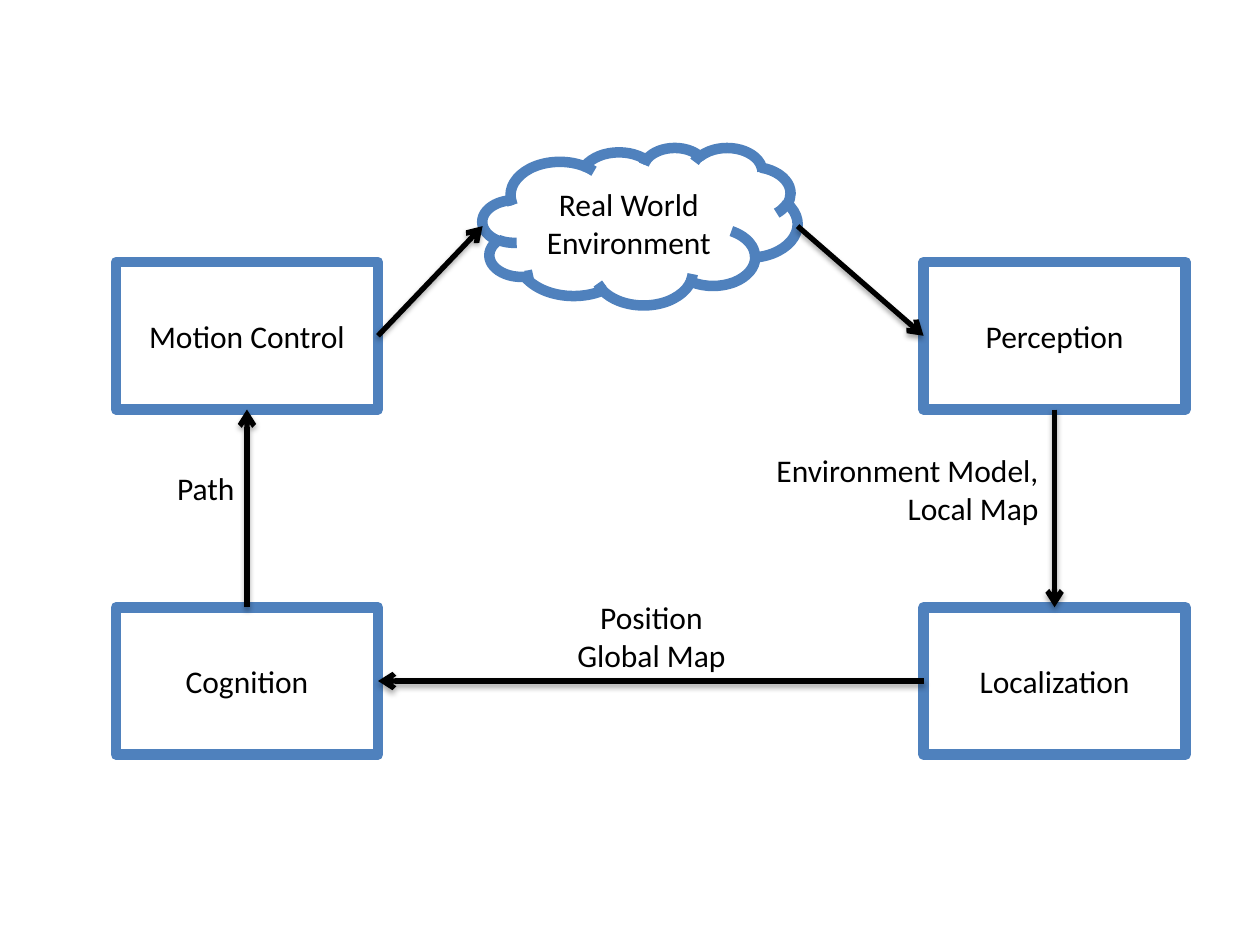
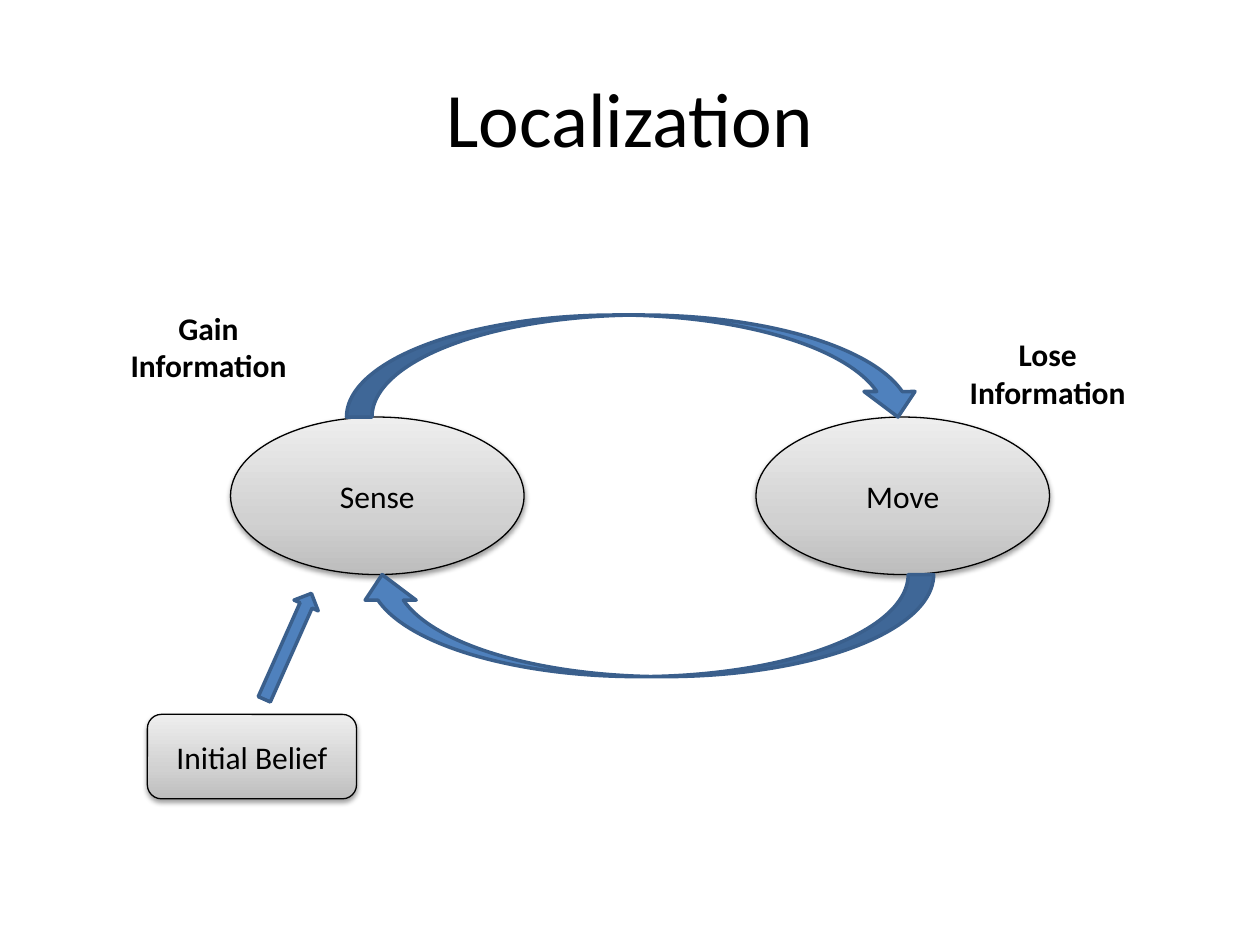
import pptx
import pptx.util
import pptx.dml.color
import pptx.enum.shapes
import pptx.enum.text
import pptx.oxml
import pptx.oxml.ns

Inches = pptx.util.Inches
Pt = pptx.util.Pt
SHAPE = pptx.enum.shapes.MSO_SHAPE
ALIGN = pptx.enum.text.PP_ALIGN
ANCHOR = pptx.enum.text.MSO_ANCHOR
NS = pptx.oxml.ns.nsdecls("a")

COLORS = {"ink": "000000", "paper": "FFFFFF", "blue": "4F81BD", "edge": "3A5F8C"}
GREYS = [(0, "BDBDBD"), (35, "D1D1D1"), (100, "EEEEEE")]
FONT = "Calibri"


def color(name):
    return pptx.dml.color.RGBColor.from_string(COLORS[name])


def write(frame, text, size=18, bold=False, align=ALIGN.CENTER, anchor=ANCHOR.MIDDLE):
    """Fill a text frame, one paragraph for each line of text."""
    frame.word_wrap = True
    frame.vertical_anchor = anchor
    frame.text = text
    for para in frame.paragraphs:
        para.alignment = align
        font = para.font
        font.name, font.size, font.bold = FONT, Pt(size), bold
        font.color.rgb = color("ink")


def shadow(props, alpha, dist):
    """Add a soft shadow that falls straight down."""
    for old in props.findall(pptx.oxml.ns.qn("a:effectLst")):
        props.remove(old)
    props.append(pptx.oxml.parse_xml(
        f'<a:effectLst {NS}><a:outerShdw blurRad="{Pt(3.1)}" dist="{Pt(dist)}" '
        f'dir="5400000" rotWithShape="0"><a:srgbClr val="{COLORS["ink"]}">'
        f'<a:alpha val="{alpha * 1000}"/></a:srgbClr></a:outerShdw></a:effectLst>'))


def shape(slide, kind, box, fill, line, width, text="", turn=0):
    item = slide.shapes.add_shape(kind, *map(Inches, box))
    item.shadow.inherit = False
    item.rotation = turn
    if fill:
        item.fill.solid()
        item.fill.fore_color.rgb = color(fill)
    item.line.color.rgb = color(line)
    item.line.width = Pt(width)
    if text:
        write(item.text_frame, text)
    return item


def block(slide, kind, box, text):
    """White shape with a thick blue outline."""
    shape(slide, kind, box, "paper", "blue", 6, text)


def node(slide, kind, box, text):
    """Grey gradient shape with a thin outline and a shadow."""
    item = shape(slide, kind, box, None, "ink", 0.75, text)
    item.fill.gradient()
    item.fill.gradient_angle = 90
    props = item._element.spPr
    stops = props.find(".//" + pptx.oxml.ns.qn("a:gsLst"))
    for old in list(stops):
        stops.remove(old)
    for pos, grey in GREYS:
        stops.append(pptx.oxml.parse_xml(
            f'<a:gs {NS} pos="{pos * 1000}"><a:srgbClr val="{grey}"/></a:gs>'))
    shadow(props, 38, 1.6)


def sweep(slide, kind, box, turn=0):
    """Solid blue block arrow."""
    shape(slide, kind, box, "blue", "edge", 2, turn=turn)


def arrow(slide, start, end):
    item = slide.shapes.add_connector(
        pptx.enum.shapes.MSO_CONNECTOR.STRAIGHT, *map(Inches, start + end))
    item.line.color.rgb = color("ink")
    item.line.width = Pt(3)
    item.line._get_or_add_ln().append(
        pptx.oxml.parse_xml(f'<a:tailEnd {NS} type="arrow"/>'))
    shadow(item._element.spPr, 35, 1.8)


def label(slide, box, text, **style):
    item = slide.shapes.add_textbox(*map(Inches, box))
    write(item.text_frame, text, anchor=ANCHOR.TOP, **style)
    item.text_frame.auto_size = pptx.enum.text.MSO_AUTO_SIZE.SHAPE_TO_FIT_TEXT


def side(box, x, y):
    """Point on a box, given as fractions of its width and height."""
    return box[0] + x * box[2], box[1] + y * box[3]


def control(deck):
    slide = deck.slides.add_slide(deck.slide_layouts[6])

    # Stages of the control loop
    left, right, top, low = 0.92, 7.33, 2.08, 4.82
    size = (2.08, 1.17)
    world = (3.83, 1.17, 2.5, 1.25)
    sense, locate = (right, top) + size, (right, low) + size
    think, motion = (left, low) + size, (left, top) + size
    block(slide, SHAPE.CLOUD, world, "Real World Environment")
    for box, text in [(sense, "Perception"), (locate, "Localization"),
                      (think, "Cognition"), (motion, "Motion Control")]:
        block(slide, SHAPE.RECTANGLE, box, text)

    # Arrows around the loop
    arrow(slide, side(world, 1, 0.5), side(sense, 0, 0.5))
    arrow(slide, side(sense, 0.5, 1), side(locate, 0.5, 0))
    arrow(slide, side(locate, 0, 0.5), side(think, 1, 0.5))
    arrow(slide, side(think, 0.5, 0), side(motion, 0.5, 1))
    arrow(slide, side(motion, 1, 0.5), side(world, 0, 0.5))

    # Data passed along the arrows
    label(slide, (5.92, 3.53, 2.42, 0.71), "Environment Model, Local Map",
          align=ALIGN.RIGHT)
    label(slide, (3.96, 4.7, 2.42, 0.71), "Position\nGlobal Map")
    label(slide, (0, 3.67, 1.96, 0.4), "Path", align=ALIGN.RIGHT)


def locating(deck):
    slide = deck.slides.add_slide(deck.slide_layouts[5])

    # Title
    title = slide.shapes.title
    title.left, title.top, title.width, title.height = map(Inches, (0.5, 0.3, 9, 1.25))
    write(title.text_frame, "Localization", size=44)

    # Cycle of sensing and moving
    node(slide, SHAPE.OVAL, (1.83, 3.31, 2.33, 1.25), "Sense")
    node(slide, SHAPE.OVAL, (6, 3.31, 2.33, 1.25), "Move")
    sweep(slide, SHAPE.CURVED_DOWN_ARROW, (2.75, 2.5, 4.58, 0.81))
    sweep(slide, SHAPE.CURVED_DOWN_ARROW, (2.83, 4.56, 4.58, 0.81), turn=180)

    # Starting point
    node(slide, SHAPE.ROUNDED_RECTANGLE, (1.17, 5.67, 1.66, 0.67), "Initial Belief")
    sweep(slide, SHAPE.UP_ARROW, (2.18, 4.67, 0.21, 0.92), turn=24)

    # Effect of each step
    label(slide, (0.75, 2.4, 1.81, 0.71), "Gain Information", bold=True)
    label(slide, (7.41, 2.61, 1.81, 0.71), "Lose\nInformation", bold=True)


def main():
    deck = pptx.Presentation()
    deck.slide_width, deck.slide_height = Inches(10), Inches(7.5)
    control(deck)
    locating(deck)
    deck.save("out.pptx")


if __name__ == "__main__":
    main()
